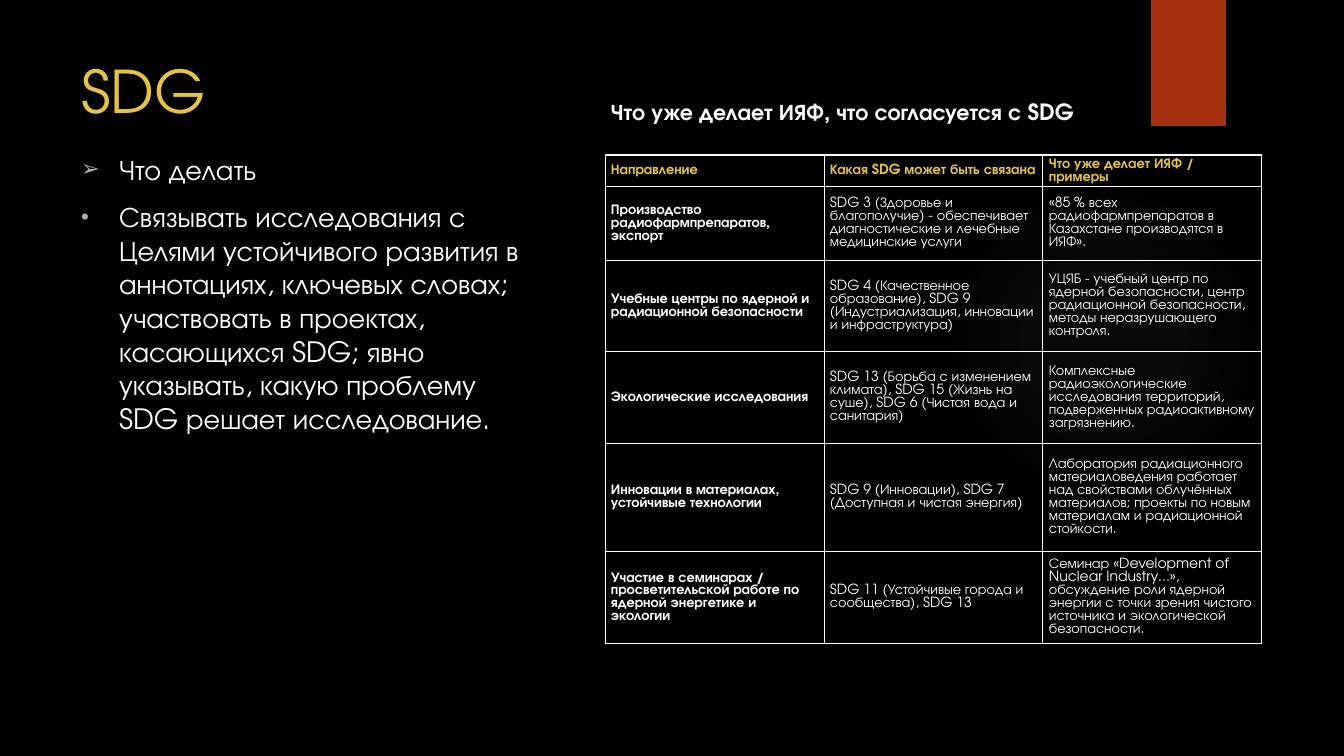
from lxml.etree import SubElement
from pptx import Presentation
from pptx.dml.color import RGBColor
from pptx.enum.shapes import MSO_SHAPE as SHAPE
from pptx.enum.text import MSO_ANCHOR as ANCHOR, MSO_AUTO_SIZE as AUTO, PP_ALIGN as ALIGN
from pptx.oxml import parse_xml
from pptx.oxml.ns import nsdecls, qn
from pptx.util import Pt

TITLE = "SDG"
BULLETS = [
    ("➢", "Что делать"),
    ("•", "Связывать исследования с Целями устойчивого развития в аннотациях, "
          "ключевых словах; участвовать в проектах, касающихся SDG; явно указывать, "
          "какую проблему SDG решает исследование."),
]
HEADING = "Что уже делает ИЯФ, что согласуется с SDG"
ROWS = [
    ("Направление", "Какая SDG может быть связана", "Что уже делает ИЯФ / примеры"),
    ("Производство радиофармпрепаратов, экспорт",
     "SDG 3 (Здоровье и благополучие) - обеспечивает диагностические и лечебные медицинские услуги",
     "«85 % всех радиофармпрепаратов в Казахстане производятся в ИЯФ»."),
    ("Учебные центры по ядерной и радиационной безопасности",
     "SDG 4 (Качественное образование), SDG 9 (Индустриализация, инновации и инфраструктура)",
     "УЦЯБ - учебный центр по ядерной безопасности, центр радиационной безопасности, "
     "методы неразрушающего контроля."),
    ("Экологические исследования",
     "SDG 13 (Борьба с изменением климата), SDG 15 (Жизнь на суше), SDG 6 (Чистая вода и санитария)",
     "Комплексные радиоэкологические исследования территорий, подверженных "
     "радиоактивному загрязнению."),
    ("Инновации в материалах, устойчивые технологии",
     "SDG 9 (Инновации), SDG 7 (Доступная и чистая энергия)",
     "Лаборатория радиационного материаловедения работает над свойствами облучённых "
     "материалов; проекты по новым материалам и радиационной стойкости."),
    ("Участие в семинарах / просветительской работе по ядерной энергетике и экологии",
     "SDG 11 (Устойчивые города и сообщества), SDG 13",
     "Семинар «Development of Nuclear Industry…», обсуждение роли ядерной энергии "
     "с точки зрения чистого источника и экологической безопасности."),
]
ROW_HEIGHTS = [31, 74, 91, 92, 108, 92]
COL_WIDTH = 219
GLOW_STOPS = [(0, 7), (36, 6), (69, 0)]

FONT = "TeX Gyre Adventor"
BLACK = RGBColor(0x00, 0x00, 0x00)
WHITE = RGBColor(0xFF, 0xFF, 0xFF)
GOLD = RGBColor(0xE5, 0xC2, 0x43)
RUST = RGBColor(0xA5, 0x30, 0x0F)
GREY = RGBColor(0xAD, 0xAD, 0xAD)
GLOW = RGBColor(0x84, 0x84, 0x84)


def px(n):
    return round(n * 914400 / 100.8)


def place(sp, x, y, w, h):
    sp.left, sp.top, sp.width, sp.height = px(x), px(y), px(w), px(h)


def style(p, size, color, bold=False):
    p.alignment = ALIGN.LEFT
    for r in p.runs:
        f = r.font
        f.name, f.size, f.bold = FONT, Pt(size), bold
        f.color.rgb = color


def add_plain(kind, x, y, w, h):
    sp = s.shapes.add_shape(kind, px(x), px(y), px(w), px(h))
    sp.shadow.inherit = False
    sp.line.fill.background()
    return sp


def add_bullet(p, char):
    pPr = p._p.get_or_add_pPr()
    pPr.set("marL", str(px(38)))
    pPr.set("indent", str(-px(38)))
    color = SubElement(pPr, qn("a:buClr"))
    SubElement(color, qn("a:srgbClr"), val=str(GREY))
    SubElement(pPr, qn("a:buSzPct"), val="80000")
    SubElement(pPr, qn("a:buFont"), typeface="Arial")
    SubElement(pPr, qn("a:buChar"), char=char)


def add_borders(cell, thick_sides):
    tcPr = cell._tc.get_or_add_tcPr()
    for side in "LRTB":
        weight = Pt(1 if side in thick_sides else 0.75)
        ln = SubElement(tcPr, qn(f"a:ln{side}"), w=str(weight))
        fill = SubElement(ln, qn("a:solidFill"))
        SubElement(fill, qn("a:srgbClr"), val=str(WHITE))


prs = Presentation()
prs.slide_width, prs.slide_height = px(1344), px(756)
s = prs.slides.add_slide(prs.slide_layouts[1])
s.background.fill.solid()
s.background.fill.fore_color.rgb = BLACK

glow = add_plain(SHAPE.OVAL, 949, 184, 310, 310)
stops = "".join(
    f'<a:gs pos="{pos * 1000}"><a:srgbClr val="{GLOW}"><a:alpha val="{alpha * 1000}"/></a:srgbClr></a:gs>'
    for pos, alpha in GLOW_STOPS)
glow_fill = parse_xml(
    f'<a:gradFill {nsdecls("a")}><a:gsLst>{stops}</a:gsLst><a:path path="circle">'
    '<a:fillToRect l="50000" t="50000" r="50000" b="50000"/></a:path></a:gradFill>')
glow._element.spPr.find(qn("a:prstGeom")).addnext(glow_fill)

tab = add_plain(SHAPE.RECTANGLE, 1151, 0, 75, 126)
tab.fill.solid()
tab.fill.fore_color.rgb = RUST

title = s.shapes.title
place(title, 71, 50, 1037, 154)
tf = title.text_frame
tf.text = TITLE
tf.vertical_anchor = ANCHOR.TOP
tf.auto_size = AUTO.NONE
style(tf.paragraphs[0], 42, GOLD)

body = s.placeholders[1]
place(body, 71, 147, 481, 387)
tf = body.text_frame
tf.auto_size = AUTO.NONE
tf.text = "\n".join(text for _, text in BULLETS)
for i, (p, (char, _)) in enumerate(zip(tf.paragraphs, BULLETS)):
    add_bullet(p, char)
    p.space_before = Pt(10 if i else 0)
    style(p, 20, WHITE)

width = COL_WIDTH * len(ROWS[0])
frame = s.shapes.add_table(len(ROWS), len(ROWS[0]), px(605), px(155), px(width), px(sum(ROW_HEIGHTS)))
table = frame.table
for col in table.columns:
    col.width = px(COL_WIDTH)
for i, (texts, height) in enumerate(zip(ROWS, ROW_HEIGHTS)):
    table.rows[i].height = px(height)
    thick_sides = {0: "T", len(ROWS) - 1: "B"}.get(i, "")
    for j, text in enumerate(texts):
        cell = table.cell(i, j)
        cell.text = text
        cell.vertical_anchor = ANCHOR.MIDDLE
        cell.margin_left = cell.margin_right = px(6)
        cell.margin_top = cell.margin_bottom = px(3)
        add_borders(cell, thick_sides)
        cell.fill.background()
        style(cell.text_frame.paragraphs[0], 10, WHITE if i else GOLD, i == 0 or j == 0)

heading = s.shapes.add_textbox(px(601), px(88), px(533), px(48))
tf = heading.text_frame
tf.word_wrap = True
tf.vertical_anchor = ANCHOR.MIDDLE
tf.text = HEADING
style(tf.paragraphs[0], 16, WHITE, True)

prs.save("out.pptx")
